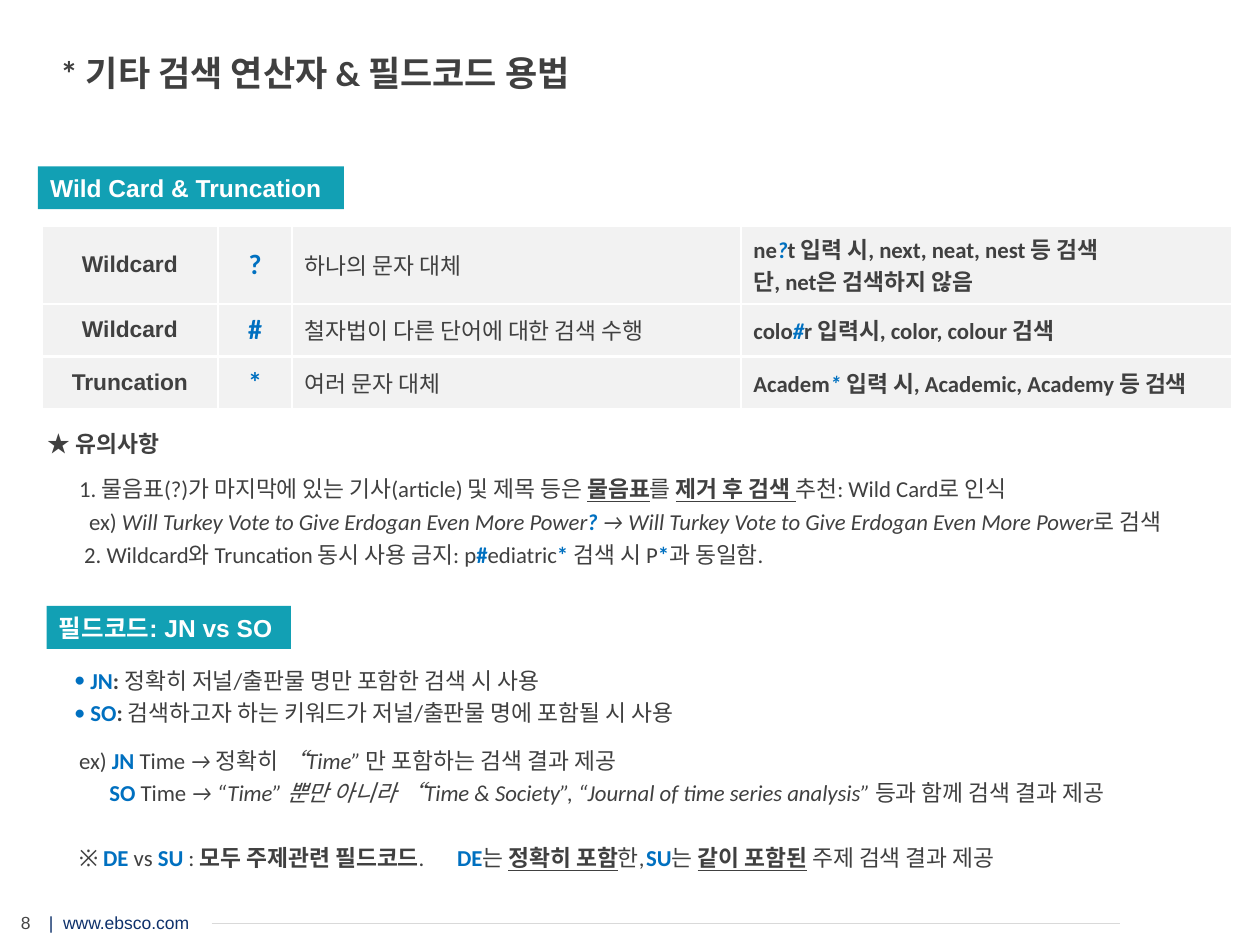
from lxml.etree import SubElement
from pptx import Presentation
from pptx.dml.color import RGBColor
from pptx.enum.shapes import MSO_CONNECTOR, MSO_SHAPE
from pptx.enum.text import MSO_ANCHOR, MSO_AUTO_SIZE, PP_ALIGN
from pptx.oxml.ns import qn
from pptx.util import Inches, Pt

COLS, ROWS = 100, 75
GRAY, BLUE, TEAL, WHITE = "404040", "0070C0", "12A0B4", "FFFFFF"
LEFT, CENTER = PP_ALIGN.LEFT, PP_ALIGN.CENTER

# Run styles: each one lists what differs from BASE
BASE = dict(name="Calibri", size=13, color=GRAY, bold=False)
STYLES = {
    "text": {},
    "bold": dict(bold=True),
    "under": dict(bold=True, underline=True),
    "ital": dict(italic=True),
    "key": dict(color=BLUE, bold=True),
    "keyital": dict(color=BLUE, bold=True, italic=True),
    "symbol": dict(color=BLUE, bold=True, size=16),
    "plain": dict(name="Arial"),
    "name": dict(name="Arial", bold=True),
    "star": dict(name="Noto Sans CJK KR", bold=True),
    "title": dict(size=20, bold=True),
    "label": dict(name="Arial", size=14, color=WHITE, bold=True),
    "site": dict(name="Arial", size=10, color="0E316B"),
    "page": dict(name="Arial", size=10, color="454545"),
}

# Table rows: name, symbol, meaning, example lines
WILDCARDS = [
    ("Wildcard", "?", "하나의 문자 대체",
     [[("bold", "ne"), ("keyital", "?"), ("bold", "t 입력 시, next, neat, nest 등 검색")],
      [("bold", "단, net은 검색하지 않음")]]),
    ("Wildcard", "#", "철자법이 다른 단어에 대한 검색 수행",
     [[("bold", "colo"), ("keyital", "#"), ("bold", "r 입력시, color, colour 검색")]]),
    ("Truncation", "*", "여러 문자 대체",
     [[("bold", "Academ"), ("keyital", "* "),
       ("bold", "입력 시, Academic, Academy 등 검색")]]),
]

# Paragraphs: runs and layout (indent in inches, space before in points)
NOTES = [
    ([("star", "★ "), ("name", "유의사항")], dict(before=0)),
    ([("text", "1. 물음표(?)가 마지막에 있는 기사(article) 및 제목 등은 "),
      ("under", "물음표"), ("text", "를 "), ("under", "제거 후 검색 "),
      ("text", "추천: Wild Card로 인식")], dict(indent=0.25, before=10.5)),
    ([("text", "ex) "), ("ital", "Will Turkey Vote to Give Erdogan Even More Power"),
      ("keyital", "?"),
      ("ital", " → Will Turkey Vote to Give Erdogan Even More Power"),
      ("text", "로 검색")], dict(indent=0.33)),
    ([("text", "2. Wildcard와 Truncation 동시 사용 금지: p"), ("key", "#"),
      ("text", "ediatric"), ("key", "* "), ("text", "검색 시 P"), ("key", "*"),
      ("text", "과 동일함.")], dict(indent=0.29)),
]
FIELDS = [
    ([("key", "JN"), ("bold", ": "),
      ("text", "정확히 저널/출판물 명만 포함한 검색 시 사용")],
     dict(indent=0.13, bullet="•", before=0)),
    ([("key", "SO"), ("bold", ": "),
      ("text", "검색하고자 하는 키워드가 저널/출판물 명에 포함될 시 사용")],
     dict(indent=0.13, bullet="•")),
    ([("text", "ex) "), ("key", "JN"), ("text", " Time "), ("ital", "→ "),
      ("text", "정확히 "), ("ital", "“Time” "),
      ("text", "만 포함하는 검색 결과 제공")], dict(indent=0.04, before=11.5)),
    ([("key", "SO"), ("text", " Time "),
      ("ital", "→ “Time” 뿐만 아니라 “Time & Society”, "
               "“Journal of time series analysis” "),
      ("text", "등과 함께 검색 결과 제공")], dict(indent=0.28)),
    ([("text", "※ "), ("key", "DE"), ("text", " vs "), ("key", "SU"),
      ("text", " : "), ("bold", "모두 주제관련 필드코드"), ("text", ".\t"),
      ("key", "DE"), ("text", "는 "), ("under", "정확히 포함"), ("text", "한,\t"),
      ("key", "SU"), ("text", "는 "), ("under", "같이 포함된"),
      ("text", " 주제 검색 결과 제공")],
     dict(indent=0.04, before=21.5, tabs=(3.08, 4.93))),
]


def rgb(value):
    return RGBColor.from_string(value)


def grid(prs, *lengths):
    """Turn column and row counts, in turn, into slide lengths."""
    steps = (prs.slide_width / COLS, prs.slide_height / ROWS)
    return [int(n * steps[i % 2]) for i, n in enumerate(lengths)]


def add_run(p, style, text):
    r = p.add_run()
    r.text = text
    for key, value in {**BASE, **STYLES[style]}.items():
        if key == "color":
            r.font.color.rgb = rgb(value)
        else:
            setattr(r.font, key, Pt(value) if key == "size" else value)


def format_paragraph(p, align=LEFT, indent=0, before=3, bullet=None, tabs=()):
    p.alignment, p.space_before = align, Pt(before)
    pPr = p._p.get_or_add_pPr()
    pPr.set("marL", str(Inches(indent)))
    pPr.set("indent", str(-Inches(indent) if bullet else 0))
    if bullet:
        SubElement(pPr, qn("a:buFont"), typeface="Calibri")
        SubElement(pPr, qn("a:buChar"), char=bullet)
    if tabs:
        stops = SubElement(pPr, qn("a:tabLst"))
        for stop in tabs:
            SubElement(stops, qn("a:tab"), pos=str(Inches(stop)), algn="l")


def fill_text(tf, paragraphs):
    for i, (runs, layout) in enumerate(paragraphs):
        p = tf.paragraphs[0] if i == 0 else tf.add_paragraph()
        format_paragraph(p, **layout)
        for style, text in runs:
            add_run(p, style, text)


def add_title(prs, s, text):
    title = s.shapes.title
    title.left, title.top, title.width, title.height = grid(prs, 0, 3.6, 70.8, 4.4)
    tf = title.text_frame
    tf.auto_size, tf.vertical_anchor = MSO_AUTO_SIZE.NONE, MSO_ANCHOR.TOP
    fill_text(tf, [([("title", text)], dict(indent=0.38, before=0))])


def add_text(prs, s, box, paragraphs, anchor=MSO_ANCHOR.TOP):
    tf = s.shapes.add_textbox(*grid(prs, *box)).text_frame
    tf.word_wrap, tf.vertical_anchor = True, anchor
    fill_text(tf, paragraphs)


def add_label(prs, s, box, text):
    sp = s.shapes.add_shape(MSO_SHAPE.RECTANGLE, *grid(prs, *box))
    sp.shadow.inherit = False
    sp.fill.solid()
    sp.fill.fore_color.rgb = rgb(TEAL)
    sp.line.fill.background()
    sp.text_frame.word_wrap = False
    fill_text(sp.text_frame, [([("label", text)], dict(before=0))])


def format_cell(cell, lines, align):
    cell.fill.solid()
    cell.fill.fore_color.rgb = rgb("F2F2F2")
    cell.vertical_anchor = MSO_ANCHOR.MIDDLE
    fill_text(cell.text_frame, [(runs, dict(align=align, before=0)) for runs in lines])
    # Borders come before the fill in the cell properties
    tcPr = cell._tc.get_or_add_tcPr()
    for i, side in enumerate(("lnL", "lnR", "lnT", "lnB")):
        ln = SubElement(tcPr, qn(f"a:{side}"), w=str(Pt(1.5)))
        SubElement(SubElement(ln, qn("a:solidFill")), qn("a:srgbClr"), val=WHITE)
        tcPr.insert(i, ln)


def add_wildcard_table(prs, s):
    box = grid(prs, 3.3, 17.9, 94.5, 14.6)
    table = s.shapes.add_table(len(WILDCARDS), 4, *box).table
    table.first_row = table.horz_banding = False
    for column, width in zip(table.columns, (14, 5.9, 35.6, 39)):
        column.width = grid(prs, width)[0]
    for row, height in zip(table.rows, (6.2, 4.2, 4.2)):
        row.height = grid(prs, 0, height)[1]
    for i, (name, symbol, meaning, example) in enumerate(WILDCARDS):
        contents = [[[("name", name)]], [[("symbol", symbol)]],
                    [[("plain", meaning)]], example]
        for j, lines in enumerate(contents):
            format_cell(table.cell(i, j), lines, CENTER if j < 2 else LEFT)


def add_footer(prs, s):
    add_text(prs, s, (2.9, 71.9, 19.4, 2.7),
             [([("site", "|  www.ebsco.com")], dict(before=0))])
    add_text(prs, s, (-0.4, 71.9, 4.9, 2.7),
             [([("page", "8")], dict(align=CENTER, before=0))], MSO_ANCHOR.MIDDLE)
    rule = s.shapes.add_connector(MSO_CONNECTOR.STRAIGHT,
                                  *grid(prs, 16.8, 73.3, 88.9, 73.3))
    rule.line.color.rgb, rule.line.width = rgb("D9D9D9"), Pt(1)
    SubElement(rule._element.spPr, qn("a:effectLst"))


def main():
    prs = Presentation()
    prs.slide_width, prs.slide_height = Inches(10), Inches(7.5)
    s = prs.slides.add_slide(prs.slide_layouts[5])
    add_footer(prs, s)
    add_title(prs, s, "* 기타 검색 연산자 & 필드코드 용법")
    # Wildcards
    add_label(prs, s, (3, 13.2, 24.3, 3.4), "Wild Card & Truncation")
    add_wildcard_table(prs, s)
    add_text(prs, s, (2.8, 33.6, 97.4, 12), NOTES)
    # Field codes
    add_label(prs, s, (3.7, 48.1, 19.4, 3.4), "필드코드: JN vs SO")
    add_text(prs, s, (4.9, 52.4, 98.6, 17.5), FIELDS)
    prs.save("out.pptx")


if __name__ == "__main__":
    main()
